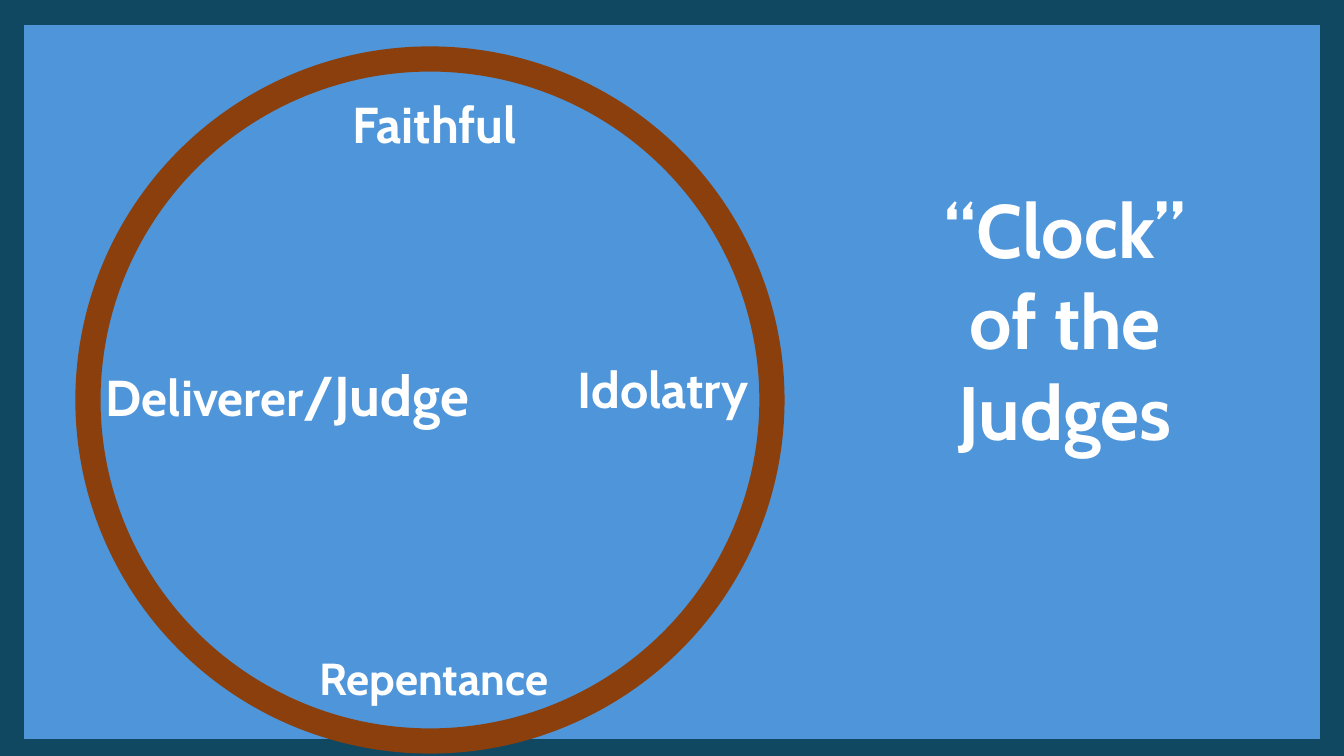
import pptx
import pptx.util
import pptx.dml.color
import pptx.enum.shapes
import pptx.enum.text

RGB = pptx.dml.color.RGBColor.from_string
SHAPE = pptx.enum.shapes.MSO_SHAPE
THEME = {
    "font": "Cabin",
    "text": RGB("FFFFFF"),
    "panel": RGB("4E95D9"),
    "frame": RGB("104862"),
    "ring": RGB("8A3F0C"),
    "title": 54, "large": 40, "label": 36, "small": 32,
    "frame_width": 24, "ring_width": 18,
}


def px(*lengths):
    """Turn pixels, at 100.8 to the inch, into EMU."""
    return [pptx.util.Emu(round(n * 914400 / 100.8)) for n in lengths]


def write(tf, paragraphs):
    """Fill a frame with centred paragraphs, each a list of (text, size name)."""
    tf.word_wrap = True
    tf.auto_size = pptx.enum.text.MSO_AUTO_SIZE.NONE
    tf.vertical_anchor = pptx.enum.text.MSO_ANCHOR.TOP
    for i, runs in enumerate(paragraphs):
        p = tf.add_paragraph() if i else tf.paragraphs[0]
        p.alignment = pptx.enum.text.PP_ALIGN.CENTER
        for text, size in runs:
            r = p.add_run()
            r.text = text
            r.font.color.rgb = THEME["text"]
            style = {"name": THEME["font"], "size": pptx.util.Pt(THEME[size]), "bold": True}
            for key, value in style.items():
                setattr(r.font, key, value)


prs = pptx.Presentation()
prs.slide_width, prs.slide_height = px(1344, 756)
s = prs.slides.add_slide(prs.slide_layouts[5])

# Framed panel and clock ring
for kind, box, fill, line in [
    (SHAPE.RECTANGLE, (7, 8, 1330, 748), "panel", "frame"),
    (SHAPE.OVAL, (88, 59, 684, 682), None, "ring"),
]:
    sp = s.shapes.add_shape(kind, *px(*box))
    sp.shadow.inherit = False
    if fill:
        sp.fill.solid()
        sp.fill.fore_color.rgb = THEME[fill]
    else:
        sp.fill.background()
    sp.line.color.rgb = THEME[line]
    sp.line.width = pptx.util.Pt(THEME[line + "_width"])

# Stages around the clock
for box, runs in [
    ((336, 88, 197, 72), [("Faithful", "label")]),
    ((281, 646, 306, 65), [("Repentance", "small")]),
    ((78, 356, 419, 78), [("Deliverer", "label"), ("/Judge", "large")]),
    ((553, 353, 220, 72), [("Idolatry", "label")]),
]:
    write(s.shapes.add_textbox(*px(*box)).text_frame, [runs])

# Title, raised above the panel
title = s.shapes.title
title.left, title.top, title.width, title.height = px(910, 178, 310, 285)
write(title.text_frame, [[("“Clock”", "title")], [("of the Judges", "title")]])
s.shapes._spTree.append(title._element)

prs.save("out.pptx")
